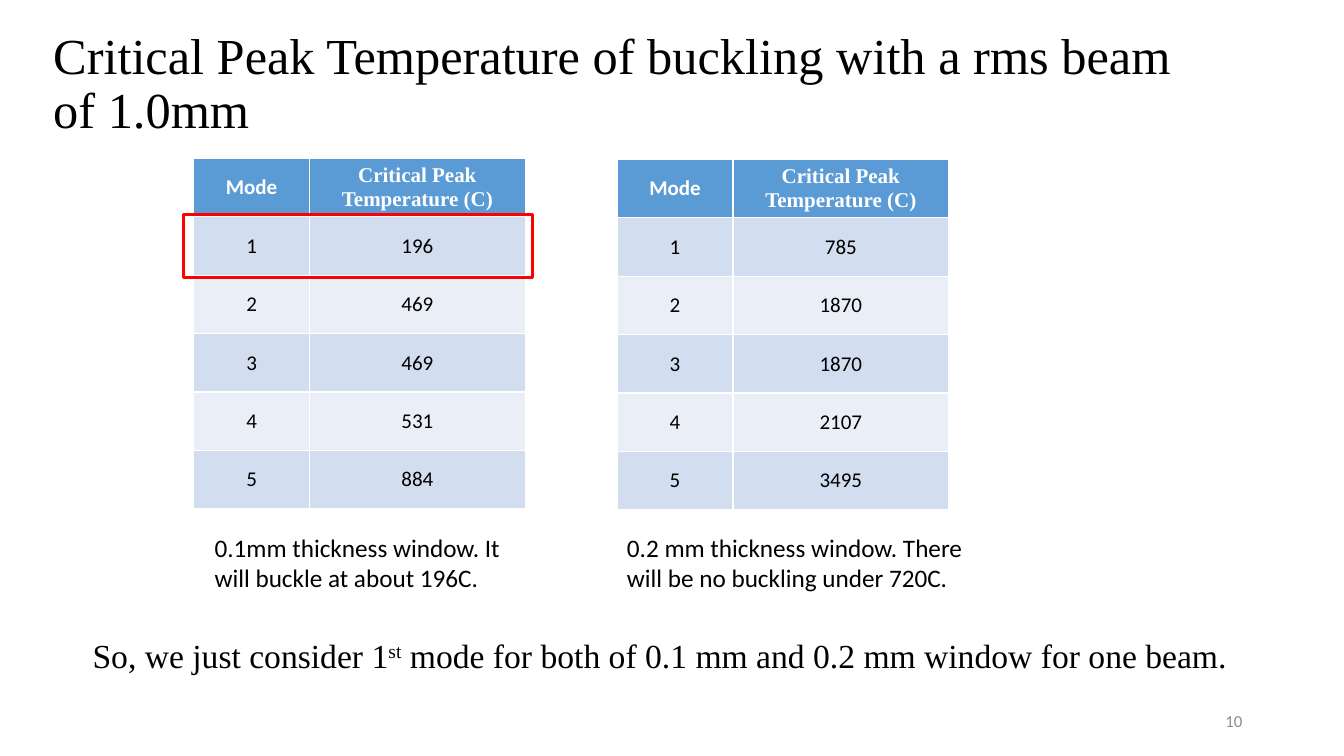
import pptx
import pptx.util
import pptx.dml.color
import pptx.enum.shapes
import pptx.enum.text

Inches = pptx.util.Inches
Pt = pptx.util.Pt
ALIGN = pptx.enum.text.PP_ALIGN
ANCHOR = pptx.enum.text.MSO_ANCHOR
SERIF = "Times New Roman"


def color(code):
    return pptx.dml.color.RGBColor.from_string(code)


def assign(target, values):
    for name, value in values.items():
        setattr(target, name, value)


class Deck:
    font = "Calibri"
    ink = "000000"
    head = "5B9BD5"
    bands = ("D2DEEF", "EAEFF7")

    def __init__(self, width, height):
        self.show = pptx.Presentation()
        assign(self.show, {"slide_width": Inches(width), "slide_height": Inches(height)})
        self.slide = self.show.slides.add_slide(self.show.slide_layouts[6])

    def words(self, para, text, size, font=None, ink=None, bold=False, base=0):
        run = para.add_run()
        run.text = text
        assign(run.font, {"name": font or self.font, "size": Pt(size), "bold": bold})
        run.font.color.rgb = color(ink or self.ink)
        if base:
            run._r.get_or_add_rPr().set("baseline", str(base * 1000))

    def text(self, box, parts, size, font=None, ink=None, anchor=ANCHOR.TOP, **form):
        frame = self.slide.shapes.add_textbox(*map(Inches, box)).text_frame
        assign(frame, {"word_wrap": True, "vertical_anchor": anchor})
        para = frame.paragraphs[0]
        assign(para, form)
        for part, base in parts:
            self.words(para, part, size, font, ink, base=base)

    def cell(self, cell, text, fill, **style):
        assign(cell, {
            "vertical_anchor": ANCHOR.MIDDLE,
            "margin_left": Inches(0.08), "margin_right": Inches(0.08),
            "margin_top": Inches(0.04), "margin_bottom": Inches(0.04),
        })
        cell.fill.solid()
        cell.fill.fore_color.rgb = color(fill)
        para = cell.text_frame.paragraphs[0]
        para.alignment = ALIGN.CENTER
        self.words(para, text, 15, **style)

    def table(self, left, top, temps):
        widths, high = (1.15, 2.14), 0.58
        count = len(temps) + 1
        box = (left, top, sum(widths), high * count)
        grid = self.slide.shapes.add_table(count, 2, *map(Inches, box)).table
        for col, width in zip(grid.columns, widths):
            col.width = Inches(width)
        heads = (("Mode", self.font), ("Critical Peak Temperature (C)", SERIF))
        for col, (label, font) in enumerate(heads):
            self.cell(grid.cell(0, col), label, self.head, font=font, ink="FFFFFF", bold=True)
        for mode, temp in enumerate(temps, 1):
            for col, value in enumerate((mode, temp)):
                self.cell(grid.cell(mode, col), str(value), self.bands[(mode - 1) % 2])

    def frame(self, box, ink, width):
        kind = pptx.enum.shapes.MSO_SHAPE.RECTANGLE
        shape = self.slide.shapes.add_shape(kind, *map(Inches, box))
        shape.shadow.inherit = False
        shape.fill.background()
        shape.line.color.rgb = color(ink)
        shape.line.width = Pt(width)


def main():
    deck = Deck(13.33, 7.5)
    title = "Critical Peak Temperature of buckling with a rms beam of 1.0mm"
    deck.text((0.43, 0.12, 11.5, 1.45), [(title, 0)], 36, SERIF,
              anchor=ANCHOR.MIDDLE, line_spacing=0.9)
    deck.text((9.42, 6.95, 3, 0.4), [("10", 0)], 12, ink="8C8C8C",
              anchor=ANCHOR.MIDDLE, alignment=ALIGN.RIGHT)
    deck.table(1.92, 1.57, (196, 469, 469, 531, 884))
    deck.table(6.12, 1.58, (785, 1870, 1870, 2107, 3495))
    notes = (
        (2.03, 3.25, 0.71, "0.1mm thickness window. It will buckle at about 196C."),
        (6.12, 3.6, 1.01, "0.2 mm thickness window. There will be no buckling under 720C."),
    )
    for left, width, height, note in notes:
        deck.text((left, 5.23, width, height), [(note, 0)], 18)
    deck.frame((1.82, 2.13, 3.46, 0.62), "FF0000", 2.25)
    deck.text((0.82, 6.25, 11.6, 0.5), [
        ("So, we just consider 1", 0),
        ("st", 30),
        (" mode for both of 0.1 mm and 0.2 mm window for one beam.", 0),
    ], 24, SERIF)
    deck.show.save("out.pptx")


if __name__ == "__main__":
    main()
